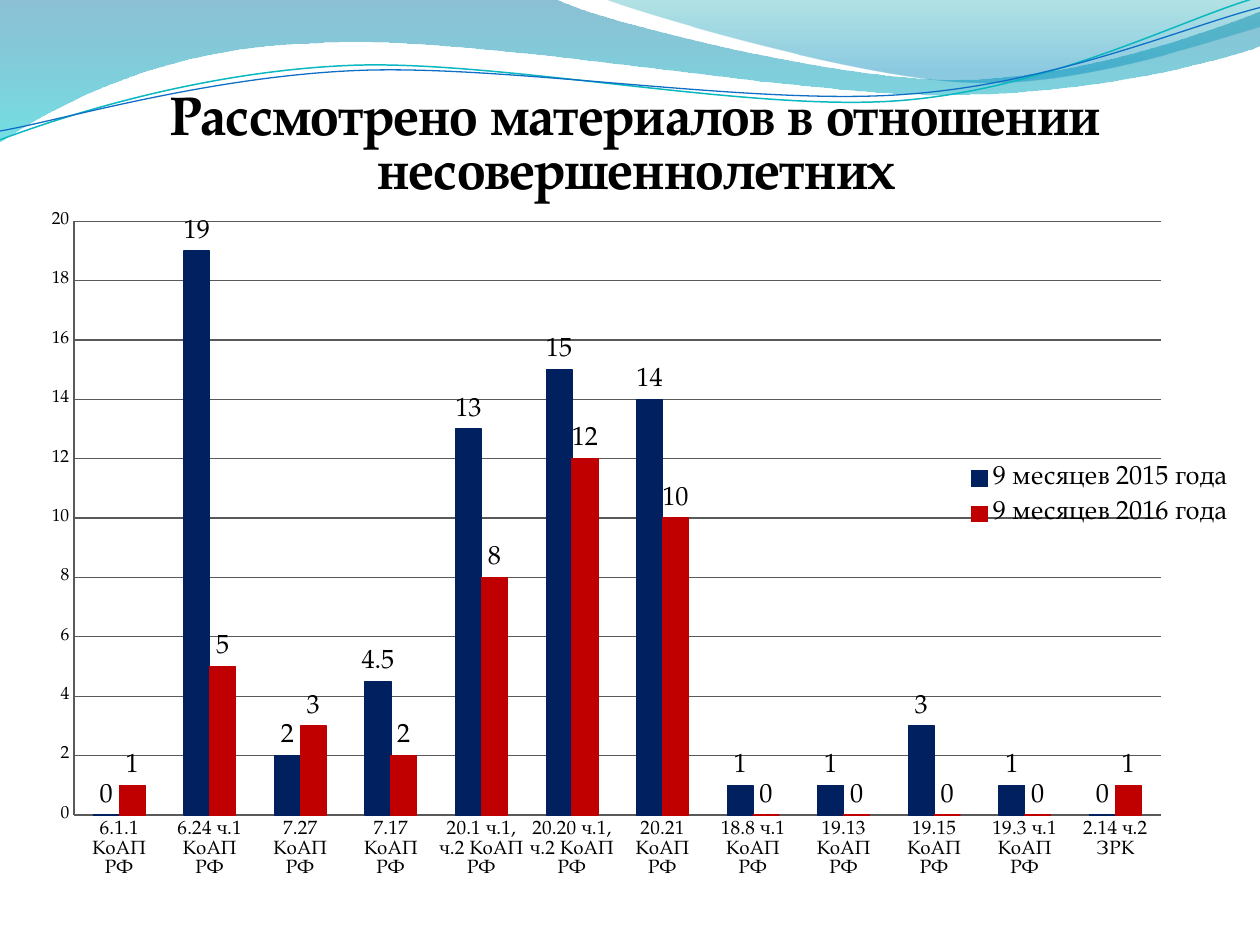
from dataclasses import dataclass

from lxml.etree import SubElement
from pptx import Presentation
from pptx.chart.data import CategoryChartData
from pptx.dml.color import RGBColor
from pptx.enum.chart import XL_CHART_TYPE, XL_LABEL_POSITION, XL_LEGEND_POSITION, XL_TICK_MARK
from pptx.oxml.ns import qn
from pptx.util import Inches, Pt


@dataclass(frozen=True)
class Theme:
    font: str = "TeX Gyre Pagella"
    text: str = "000000"
    grid: str = "595959"
    series: tuple = ("002060", "C00000")
    teal: str = "0AB8BF"
    blue: str = "0F6FC6"
    # Gradient stops: position, colour, opacity in percent
    wave: tuple = ((0, "0074A1", 45), (1, "00C6CF", 55))
    crest: tuple = ((0, "00A1A9", 30), (0.8, "008BBF", 45))
    title_size: int = 31
    label_size: int = 15
    category_size: int = 11
    base_size: int = 10


THEME = Theme()

TITLE = "Рассмотрено материалов в отношении несовершеннолетних"
CATEGORIES = [
    "6.1.1 КоАП РФ", "6.24 ч.1 КоАП РФ", "7.27 КоАП РФ", "7.17 КоАП РФ",
    "20.1 ч.1, ч.2 КоАП РФ", "20.20 ч.1, ч.2 КоАП РФ", "20.21 КоАП РФ",
    "18.8 ч.1 КоАП РФ", "19.13 КоАП РФ", "19.15 КоАП РФ",
    "19.3 ч.1 КоАП РФ", "2.14 ч.2 ЗРК",
]
SERIES = {
    "9 месяцев 2015 года": (0, 19, 2, 4.5, 13, 15, 14, 1, 1, 3, 1, 0),
    "9 месяцев 2016 года": (1, 5, 3, 2, 8, 12, 10, 0, 0, 0, 0, 1),
}

# Each segment is one end point (line) or three points (Bézier curve), in inches
WAVE = ((0, 0), [
    [(4.4, -0.01)],
    [(4.76, 0.17), (6.64, 0.63), (7.58, 0.63)],
    [(8.53, 0.63), (9.58, 0.26), (10, 0.09)],
    [(10.01, 0.36)],
    [(9.83, 0.44), (8.7, 0.76), (7.46, 0.75)],
    [(6.22, 0.75), (3.82, 0.28), (2.57, 0.34)],
    [(1.29, 0.36), (0.46, 0.83), (-0.01, 1.13)],
])
CREST = ((4.79, -0.01), [
    [(5.09, 0.11), (6.82, 0.62), (7.69, 0.65)],
    [(8.56, 0.69), (9.61, 0.32), (10, 0.21)],
    [(10, 0)],
])
TEAL_LINE = ((0, 1.11), [
    [(0.48, 0.93), (1.58, 0.57), (2.77, 0.52)],
    [(3.95, 0.47), (5.93, 0.89), (7.13, 0.8)],
    [(8.33, 0.71), (9.38, 0.15), (9.98, -0.02)],
])
BLUE_LINE = ((0, 1.04), [
    [(0.47, 0.96), (1.64, 0.61), (2.83, 0.56)],
    [(4.03, 0.51), (5.97, 0.84), (7.17, 0.75)],
    [(8.36, 0.67), (9.41, 0.21), (10, 0.06)],
])


def rgb(value):
    return RGBColor.from_string(value)


def style_font(font, *, size, color=THEME.text, bold=False):
    font.name = THEME.font
    font.size = Pt(size)
    font.bold = bold
    font.color.rgb = rgb(color)


def write_text(tf, text, **style):
    r = tf.paragraphs[0].add_run()
    r.text = text
    style_font(r.font, **style)


def add_curve(slide, left, top, outline, *, close):
    """Build a freeform, then join each curve's three points into a Bézier."""
    start, segments = outline
    points = [(left + Inches(x), top + Inches(y)) for seg in segments for x, y in seg]
    builder = slide.shapes.build_freeform(left + Inches(start[0]), top + Inches(start[1]))
    builder.add_line_segments(points, close=close)
    sp = builder.convert_to_shape()
    sp.shadow.inherit = False
    steps = iter(list(sp.element.iter(qn("a:lnTo"))))
    for seg in segments:
        first, *rest = [next(steps) for _ in seg]
        if rest:
            first.tag = qn("a:cubicBezTo")
            bezier = first.makeelement(qn("a:cubicBezTo"))
            first.addprevious(bezier)
            for step in (first, *rest):
                bezier.append(step[0])
                step.getparent().remove(step)
    return sp


def add_gradient_wave(slide, left, top, outline, stops):
    sp = add_curve(slide, left, top, outline, close=True)
    sp.line.fill.background()
    sp.fill.gradient()
    sp.fill.gradient_angle = 270
    for stop, (position, color, _) in zip(sp.fill.gradient_stops, stops):
        stop.position = position
        stop.color.rgb = rgb(color)
    gradient = sp.element.spPr.find(qn("a:gradFill"))
    for clr, (_, _, opacity) in zip(gradient.iter(qn("a:srgbClr")), stops):
        SubElement(clr, qn("a:alpha"), val=str(opacity * 1000))


def add_wave_line(slide, left, top, outline, color, width):
    sp = add_curve(slide, left, top, outline, close=False)
    sp.fill.background()
    sp.line.color.rgb = rgb(color)
    sp.line.width = Pt(width)


def add_header_waves(slide, left, top):
    add_gradient_wave(slide, left, top, WAVE, THEME.wave)
    add_gradient_wave(slide, left, top, CREST, THEME.crest)
    add_wave_line(slide, left, top, TEAL_LINE, THEME.teal, 0.85)
    add_wave_line(slide, left, top, BLUE_LINE, THEME.blue, 0.75)


def set_layout(parent, index, x, y, w, h, inner=False):
    """Place a chart part by fractions of the chart's width and height."""
    for old in parent.findall(qn("c:layout")):
        parent.remove(old)
    layout = parent.makeelement(qn("c:layout"))
    parent.insert(index, layout)
    manual = SubElement(layout, qn("c:manualLayout"))
    values = {"xMode": "edge", "yMode": "edge", "x": x, "y": y, "w": w, "h": h}
    if inner:
        values = {"layoutTarget": "inner", **values}
    for name, value in values.items():
        SubElement(manual, qn(f"c:{name}"), val=str(value))


def style_axis(axis, size):
    axis.major_tick_mark = axis.minor_tick_mark = XL_TICK_MARK.NONE
    style_font(axis.tick_labels.font, size=size)
    axis.format.line.color.rgb = rgb(THEME.grid)
    axis.format.line.width = Pt(0.75)


def add_case_chart(slide, left, top, width, height):
    data = CategoryChartData()
    data.categories = CATEGORIES
    for name, values in SERIES.items():
        data.add_series(name, values)
    chart = slide.shapes.add_chart(
        XL_CHART_TYPE.COLUMN_CLUSTERED, left, top, width, height, data).chart
    style_font(chart.font, size=THEME.base_size)
    chart.has_title = True
    write_text(chart.chart_title.text_frame, TITLE, size=THEME.title_size, bold=True)

    style_axis(chart.category_axis, THEME.category_size)
    axis = chart.value_axis
    style_axis(axis, THEME.base_size)
    axis.minimum_scale, axis.maximum_scale, axis.major_unit = 0, 20, 2
    axis.has_major_gridlines = True
    axis.major_gridlines.format.line.color.rgb = rgb(THEME.grid)
    axis.major_gridlines.format.line.width = Pt(0.75)

    plot = chart.plots[0]
    plot.gap_width, plot.overlap, plot.vary_by_categories = 150, 0, False
    for series, color in zip(plot.series, THEME.series):
        series.format.fill.solid()
        series.format.fill.fore_color.rgb = rgb(color)
        series.format.line.color.rgb = rgb(color)
        series.format.line.width = Pt(0.75)
        labels = series.data_labels
        labels.show_value = True
        labels.position = XL_LABEL_POSITION.OUTSIDE_END
        style_font(labels.font, size=THEME.label_size)

    chart.has_legend = True
    legend = chart.legend
    legend.position = XL_LEGEND_POSITION.RIGHT
    legend.include_in_layout = False
    style_font(legend.font, size=THEME.label_size)
    root = chart.element
    set_layout(next(root.iter(qn("c:plotArea"))), 0, 0.04, 0.19, 0.89, 0.68, inner=True)
    set_layout(next(root.iter(qn("c:legend"))), 1, 0.77, 0.46, 0.22, 0.09)


def main():
    prs = Presentation()
    prs.slide_width, prs.slide_height = Inches(10), Inches(7.5)
    slide = prs.slides.add_slide(prs.slide_layouts[6])
    add_header_waves(slide, Inches(0), Inches(0))
    add_case_chart(slide, Inches(0.2), Inches(0.44), Inches(9.69), Inches(6.93))
    prs.save("out.pptx")


if __name__ == "__main__":
    main()
